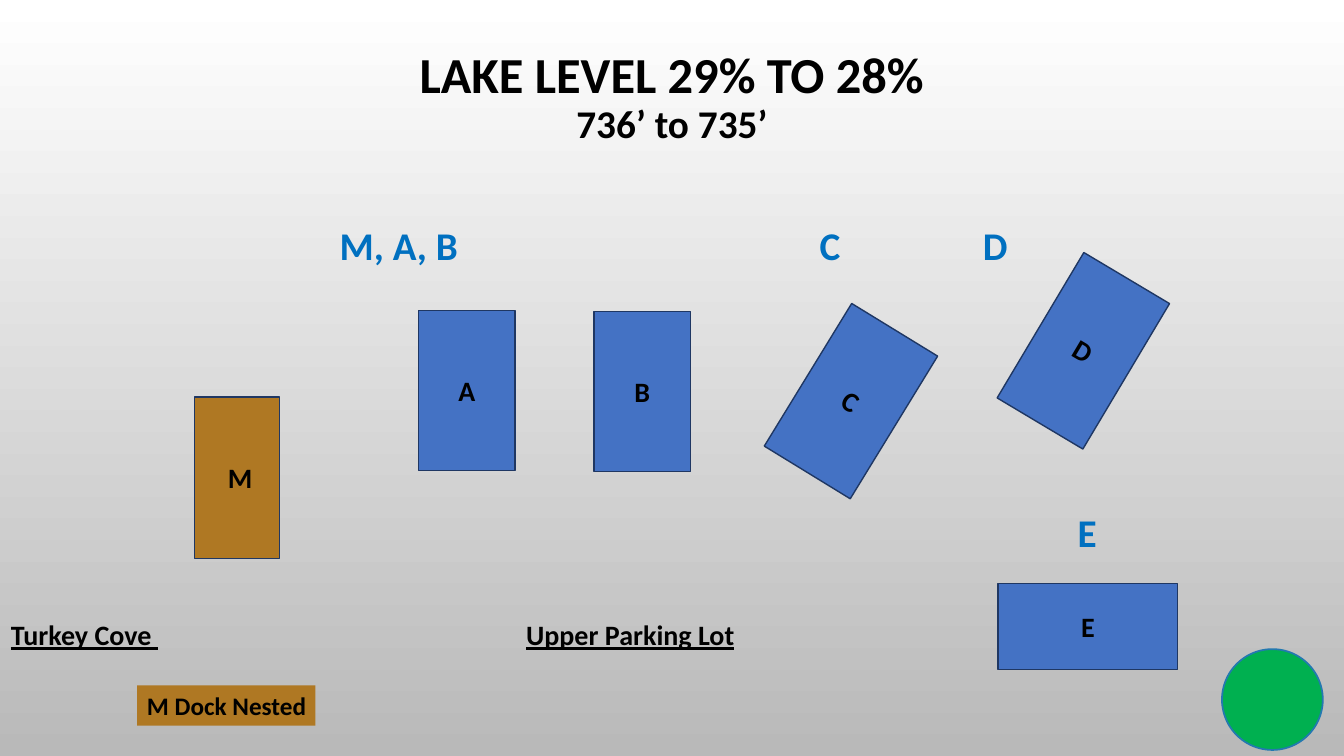
import pptx
import pptx.util
import pptx.dml.color
import pptx.enum.shapes
import pptx.enum.text

Inches, Pt = pptx.util.Inches, pptx.util.Pt
RGBColor = pptx.dml.color.RGBColor
SHAPE = pptx.enum.shapes.MSO_SHAPE
ANCHOR = pptx.enum.text.MSO_ANCHOR
ALIGN = pptx.enum.text.PP_ALIGN

BLACK = RGBColor(0x00, 0x00, 0x00)
WHITE = RGBColor(0xFF, 0xFF, 0xFF)
GREY = RGBColor(0xB9, 0xB9, 0xB9)
DOCK_BLUE = RGBColor(0x44, 0x72, 0xC4)
DOCK_EDGE = RGBColor(0x1F, 0x37, 0x63)
BROWN = RGBColor(0xAF, 0x78, 0x23)
LABEL_BLUE = RGBColor(0x00, 0x70, 0xC0)
GREEN = RGBColor(0x00, 0xB0, 0x50)
GREEN_EDGE = RGBColor(0x23, 0x79, 0xB0)

TITLE = [("LAKE LEVEL 29% TO 28%", 36), ("736’ to 735’", 28)]
# name, (left, top, width, height), rotation, fill
DOCKS = [
    ("A", (4.15, 3.08, 0.96, 1.59), 0, DOCK_BLUE),
    ("B", (5.89, 3.09, 0.96, 1.59), 0, DOCK_BLUE),
    (" M", (1.93, 3.94, 0.84, 1.6), 0, BROWN),
    ("C", (7.94, 3.15, 1, 1.66), 31.5, DOCK_BLUE),
    ("D", (10.25, 2.64, 0.99, 1.68), 30.8, DOCK_BLUE),
    ("E", (9.9, 5.79, 1.78, 0.85), 0, DOCK_BLUE),
]
# text, (left, top, width, height)
DOCK_LABELS = [
    ("M, A, B", (3.27, 2.15, 1.4, 0.57)),
    ("C", (8.03, 2.15, 0.41, 0.57)),
    ("D", (9.65, 2.15, 0.45, 0.57)),
    ("E", (10.59, 4.99, 0.39, 0.57)),
]
PLACES = [
    ("Turkey Cove ", (0.01, 6.08, 1.8, 0.44)),
    ("Upper Parking Lot", (5.12, 6.08, 2.4, 0.44)),
]
LEGEND = ("M Dock Nested", (1.36, 6.8, 1.77, 0.4))
STATUS_LIGHT = (12.12, 6.44, 1, 1)


def add_run(p, text, size, color=BLACK, underline=None):
    r = p.add_run()
    r.text = text
    r.font.name = "Calibri"
    r.font.size = Pt(size)
    r.font.bold = True
    r.font.underline = underline
    r.font.color.rgb = color


def add_filled(slide, kind, box, fill, edge=None, width=1):
    sp = slide.shapes.add_shape(kind, *map(Inches, box))
    sp.shadow.inherit = False
    sp.fill.solid()
    sp.fill.fore_color.rgb = fill
    if edge is None:
        sp.line.fill.background()
    else:
        sp.line.color.rgb = edge
        sp.line.width = Pt(width)
    return sp


def add_label(slide, text, box, size, color=BLACK, underline=None):
    tf = slide.shapes.add_textbox(*map(Inches, box)).text_frame
    tf.word_wrap = False
    add_run(tf.paragraphs[0], text, size, color, underline)


def set_background(slide):
    fill = slide.background.fill
    fill.gradient()
    fill.gradient_angle = 270
    for stop, color in zip(fill.gradient_stops, (WHITE, GREY)):
        stop.color.rgb = color


def fill_title(slide):
    title = slide.shapes.title
    title.left, title.top = Inches(1), Inches(0.35)
    title.width, title.height = Inches(11.33), Inches(1.25)
    tf = title.text_frame
    tf.vertical_anchor = ANCHOR.MIDDLE
    p = tf.paragraphs[0]
    p.alignment = ALIGN.CENTER
    p.line_spacing = 0.9
    for i, (text, size) in enumerate(TITLE):
        if i:
            p.add_line_break()
        add_run(p, text, size)


def main():
    prs = pptx.Presentation()
    prs.slide_width, prs.slide_height = Inches(13.33), Inches(7.5)
    slide = prs.slides.add_slide(prs.slide_layouts[5])
    set_background(slide)
    fill_title(slide)

    for name, box, rotation, fill in DOCKS:
        sp = add_filled(slide, SHAPE.RECTANGLE, box, fill, DOCK_EDGE)
        sp.rotation = rotation
        tf = sp.text_frame
        tf.vertical_anchor = ANCHOR.MIDDLE
        tf.paragraphs[0].alignment = ALIGN.CENTER
        add_run(tf.paragraphs[0], name, 20)

    for text, box in DOCK_LABELS:
        add_label(slide, text, box, 28, LABEL_BLUE)
    for text, box in PLACES:
        add_label(slide, text, box, 20, underline=True)

    text, box = LEGEND
    tf = add_filled(slide, SHAPE.RECTANGLE, box, BROWN).text_frame
    tf.word_wrap = True
    tf.vertical_anchor = ANCHOR.MIDDLE
    tf.margin_right = Inches(0.02)
    tf.paragraphs[0].alignment = ALIGN.LEFT
    add_run(tf.paragraphs[0], text, 18)

    add_filled(slide, SHAPE.OVAL, STATUS_LIGHT, GREEN, GREEN_EDGE, 1.25)
    prs.save("out.pptx")


if __name__ == "__main__":
    main()
